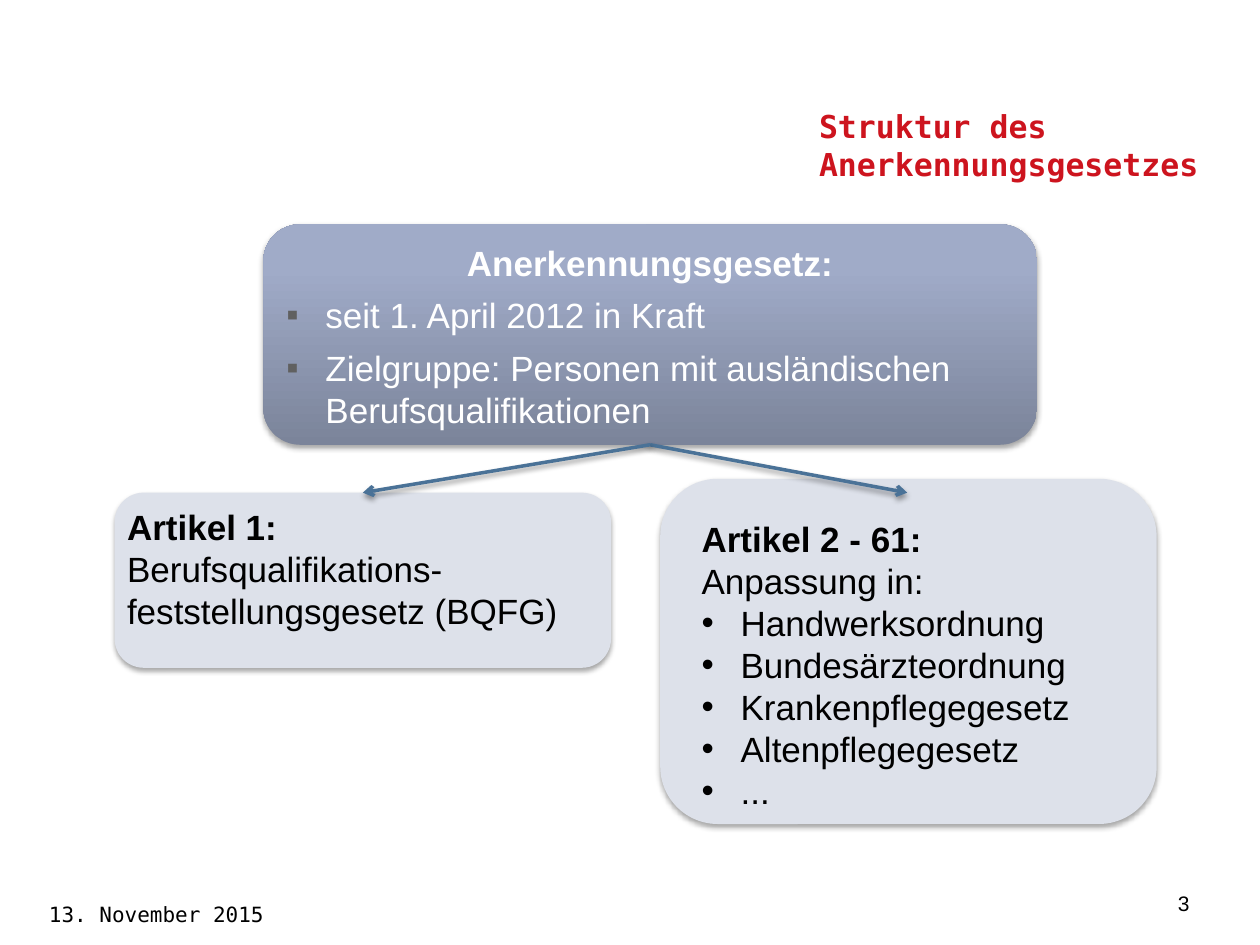
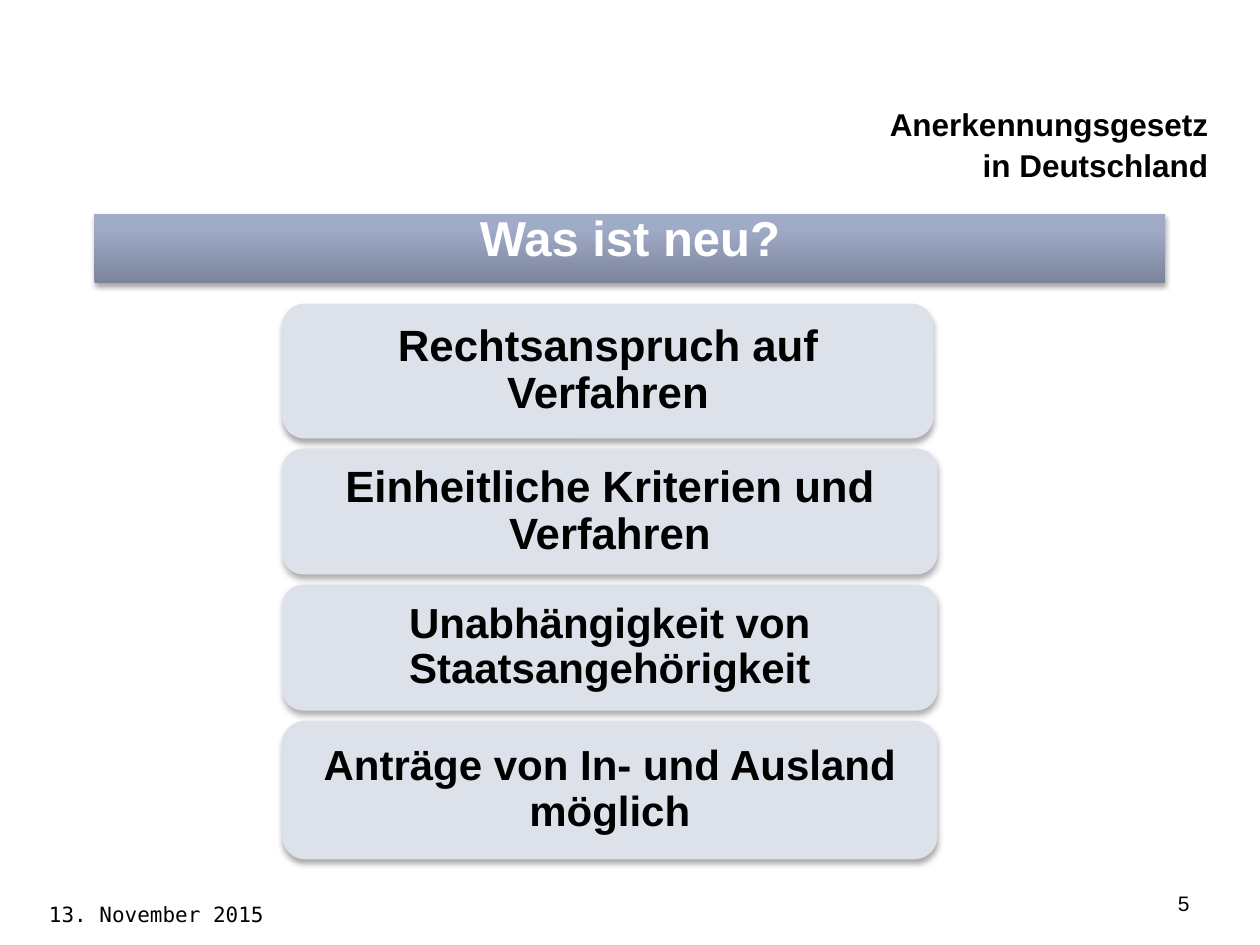
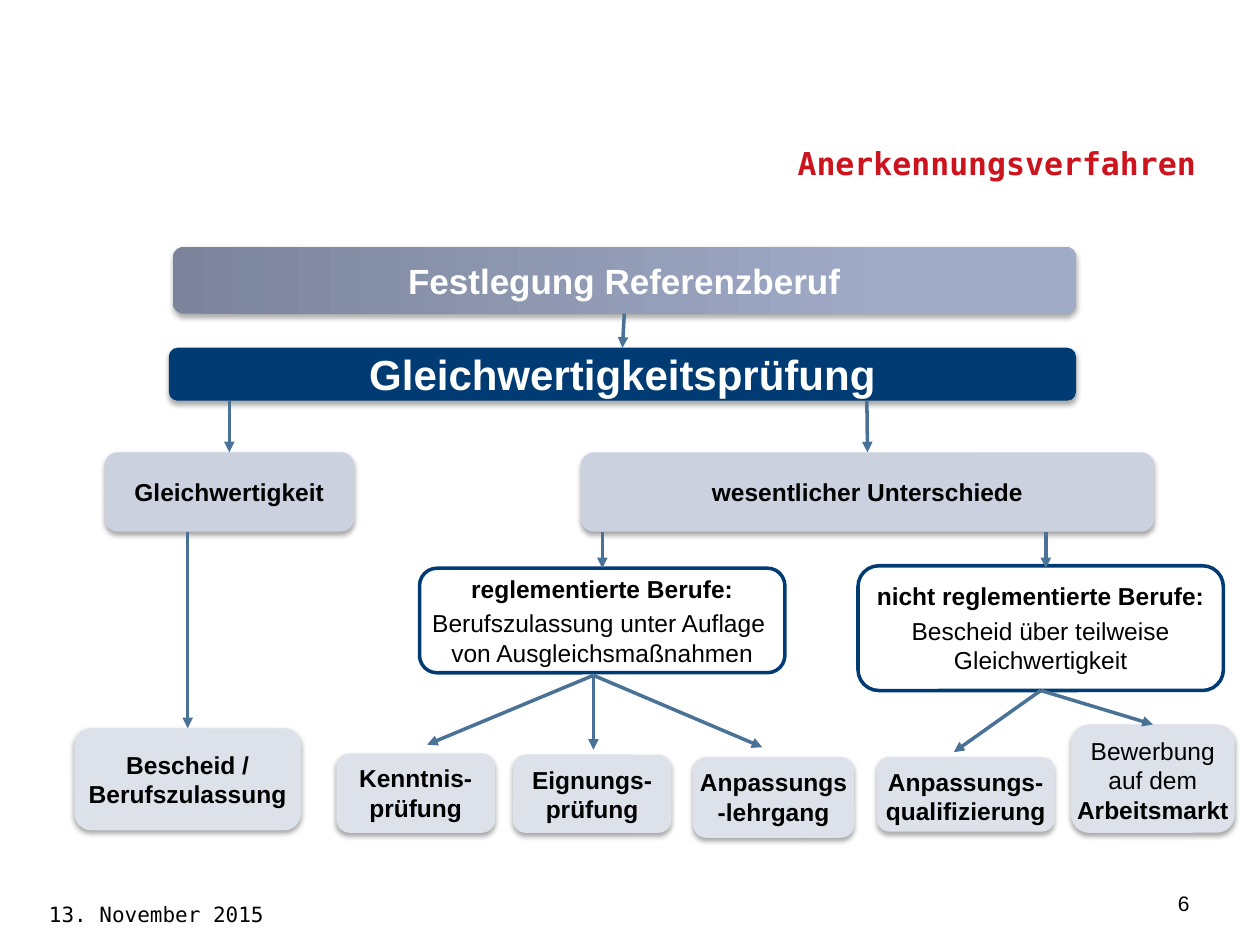
"""Builds three slides on the German recognition act for foreign qualifications."""
from copy import deepcopy

from lxml import etree
from pptx import Presentation
from pptx.dml.color import RGBColor
from pptx.enum import shapes, text
from pptx.oxml import ns
from pptx.util import Inches, Pt

BLACK = RGBColor(0x00, 0x00, 0x00)
WHITE = RGBColor(0xFF, 0xFF, 0xFF)
RED = RGBColor(0xCD, 0x14, 0x1E)
NAVY = RGBColor(0x00, 0x3C, 0x73)
STEEL = RGBColor(0x4A, 0x72, 0x97)
PALE = RGBColor(0xDD, 0xE1, 0xEA)
MIST = RGBColor(0xCC, 0xD1, 0xDF)
GRADIENT = (RGBColor(0x7B, 0x84, 0x9A), RGBColor(0xA0, 0xAB, 0xC8))
GREY = RGBColor(0x60, 0x60, 0x60)

SANS = "Arial"
MONO = "DejaVu Sans Mono"
SOFT_SHADOW = (35, 3.1, 1.8)
DEEP_SHADOW = (32, 3.5, 2.2)
TOP, MIDDLE = text.MSO_ANCHOR.TOP, text.MSO_ANCHOR.MIDDLE
LEFT, CENTER, RIGHT = text.PP_ALIGN.LEFT, text.PP_ALIGN.CENTER, text.PP_ALIGN.RIGHT
ROUNDED, RECTANGLE = shapes.MSO_SHAPE.ROUNDED_RECTANGLE, shapes.MSO_SHAPE.RECTANGLE


def sub(parent, tag, **attributes):
    """Append a DrawingML element to its parent."""
    return etree.SubElement(parent, ns.qn(tag), {k: str(v) for k, v in attributes.items()})


def inches(values):
    """Convert a sequence of numbers to lengths."""
    return [Inches(value) for value in values]


def cast_shadow(effects, opacity, blur, distance):
    """Add a black shadow that falls straight down."""
    outer = sub(effects, "a:outerShdw", blurRad=Pt(blur), dist=Pt(distance),
                dir=5400000, rotWithShape=0)
    color = sub(outer, "a:srgbClr", val=BLACK)
    sub(color, "a:alpha", val=opacity * 1000)


def add_text(frame, content, size=14, bold=False, color=BLACK, font=SANS, align=LEFT,
             after=0, line=None, indent=0, bullet=None, bullet_color=BLACK, bold_end=""):
    """Add one formatted paragraph to a text frame."""
    paragraph = frame.paragraphs[0]
    if paragraph.runs:
        paragraph = frame.add_paragraph()
    properties = paragraph._p.get_or_add_pPr()
    if indent:
        properties.set("marL", str(Inches(indent)))
    if bullet:
        properties.set("indent", str(-Inches(indent)))
        sub(sub(properties, "a:buClr"), "a:srgbClr", val=bullet_color)
        sub(properties, "a:buFont", typeface=SANS)
        sub(properties, "a:buChar", char=bullet)
    paragraph.alignment = align
    paragraph.space_before = Pt(0)
    paragraph.space_after = Pt(after)
    if line:
        paragraph.line_spacing = line
    for number, part in enumerate(content.split("\n")):
        if number:
            paragraph.add_line_break()
        paragraph.add_run().text = part
    if bold_end:
        paragraph.add_run().text = bold_end
    for run in paragraph.runs:
        run.font.name, run.font.size, run.font.bold = font, Pt(size), bold
        run.font.color.rgb = color
    if bold_end:
        paragraph.runs[-1].font.bold = True
    for line_break in paragraph._p.findall(ns.qn("a:br")):
        line_break.insert(0, deepcopy(paragraph.runs[0]._r.rPr))


def prepare(frame, anchor=TOP, side=0.1, edge=0.05):
    """Set wrapping, anchor and insets of a text frame."""
    frame.word_wrap = True
    frame.auto_size = text.MSO_AUTO_SIZE.NONE
    frame.vertical_anchor = anchor
    frame.margin_left = frame.margin_right = Inches(side)
    frame.margin_top = frame.margin_bottom = Inches(edge)
    return frame


def add_label(slide, place, **layout):
    """Add an empty text box and return its frame."""
    return prepare(slide.shapes.add_textbox(*inches(place)).text_frame, **layout)


def add_box(slide, place, fill=PALE, angle=None, outline=None, shadow=SOFT_SHADOW,
            outlined_by=ROUNDED, **layout):
    """Add a box with a solid fill, or with the gradient when an angle is given."""
    box = slide.shapes.add_shape(outlined_by, *inches(place))
    if angle is None:
        box.fill.solid()
        box.fill.fore_color.rgb = fill
    else:
        box.fill.gradient()
        box.fill.gradient_angle = angle
        for stop, color, position in zip(box.fill.gradient_stops, GRADIENT, (0, 0.8)):
            stop.color.rgb = color
            stop.position = position
    if outline:
        box.line.color.rgb = outline
        box.line.width = Pt(2)
    else:
        box.line.fill.background()
    box.shadow.inherit = False
    if shadow:
        cast_shadow(box._element.spPr.find(ns.qn("a:effectLst")), *shadow)
    prepare(box.text_frame, **layout)
    return box


def add_arrow(slide, start, end, head="triangle", shadow=None):
    """Draw an arrow; a box as start or end is joined at its bottom or top."""
    begin_point = (0, 0) if not isinstance(start, tuple) else start
    end_point = (0, 0) if not isinstance(end, tuple) else end
    arrow = slide.shapes.add_connector(shapes.MSO_CONNECTOR.STRAIGHT,
                                       *inches(begin_point + end_point))
    if not isinstance(start, tuple):
        arrow.begin_connect(start, 2)
    if not isinstance(end, tuple):
        arrow.end_connect(end, 0)
    arrow.line.color.rgb = STEEL
    arrow.line.width = Pt(2)
    sub(arrow.line._get_or_add_ln(), "a:tailEnd", type=head)
    effects = sub(arrow._element.spPr, "a:effectLst")
    if shadow:
        cast_shadow(effects, *shadow)


def add_slide(deck, number, title_place, title_lines, **title_format):
    """Add a title-only slide with its title, date and page number."""
    slide = deck.slides.add_slide(deck.slide_layouts[5])
    title = slide.shapes.title
    title.left, title.top, title.width, title.height = inches(title_place)
    frame = prepare(title.text_frame, anchor=MIDDLE)
    style = dict(size=18, bold=True, color=RED, font=MONO) | title_format
    for title_line in title_lines:
        add_text(frame, title_line, **style)
    add_text(add_label(slide, (0, 6.89, 10, 0.59)), "13. November 2015",
             size=12, font=MONO, indent=0.29, line=Pt(30))
    add_text(add_label(slide, (7.37, 7.02, 2.17, 0.28)), str(number), size=12, align=RIGHT)
    return slide


def build_structure(deck):
    """Slide on the structure of the act."""
    slide = add_slide(deck, 3, (6.4, 0.44, 3.34, 1.42),
                      ["Struktur des\nAnerkennungsgesetzes"])
    act = add_box(slide, (2.09, 1.78, 6.14, 1.75), angle=90)
    add_text(act.text_frame, "Anerkennungsgesetz:", size=20, bold=True, color=WHITE,
             align=CENTER, after=6)
    for fact in ("seit 1. April 2012 in Kraft",
                 "Zielgruppe: Personen mit ausländischen Berufsqualifikationen"):
        add_text(act.text_frame, fact, size=20, color=WHITE, after=6, indent=0.31,
                 bullet="▪", bullet_color=GREY)

    first_article = add_box(slide, (0.91, 3.91, 3.94, 1.39))
    add_box(slide, (5.24, 3.8, 3.94, 2.74))
    first = add_label(slide, (0.91, 3.96, 3.62, 1.11))
    add_text(first, "Artikel 1:", size=20, bold=True)
    add_text(first, "Berufsqualifikations-feststellungsgesetz (BQFG)", size=20)
    others = add_label(slide, (5.47, 4.06, 3.94, 2.46))
    add_text(others, "Artikel 2 - 61:", size=20, bold=True)
    add_text(others, "Anpassung in:", size=20)
    for law in ("Handwerksordnung", "Bundesärzteordnung", "Krankenpflegegesetz",
                "Altenpflegegesetz", "..."):
        add_text(others, law, size=20, indent=0.31, bullet="•")
    for target in ((7.2, 3.91), first_article):
        add_arrow(slide, act, target, head="arrow", shadow=(38, 3.1, 1.6))


def build_news(deck):
    """Slide on what the act changes."""
    slide = add_slide(deck, 5, (6.65, 0.76, 3.04, 0.77),
                      ["Anerkennungsgesetz", "in Deutschland"],
                      font=SANS, color=BLACK, align=RIGHT, after=2)
    question = add_box(slide, (0.75, 1.7, 8.5, 0.55), angle=90, outlined_by=RECTANGLE,
                       side=0, edge=0)
    add_text(question.text_frame, "Was ist neu?", size=28, bold=True, color=WHITE,
             align=CENTER, line=Pt(30))
    top = 2.41
    for change, width, height, size in (
            ("Rechtsanspruch auf Verfahren", 5.17, 1.07, 25),
            ("Einheitliche Kriterien und Verfahren", 5.2, 1, 25),
            ("Unabhängigkeit von Staatsangehörigkeit", 5.2, 1, 24),
            ("Anträge von In- und Ausland möglich", 5.2, 1.1, 24)):
        card = add_box(slide, (2.24, top, width, height), shadow=DEEP_SHADOW, anchor=MIDDLE)
        add_text(card.text_frame, change, size=size, bold=True, align=CENTER, line=0.9)
        top += height + 0.08


def add_step(slide, place, content, size=14, color=BLACK, **look):
    """Add a box with a bold centred caption in its middle."""
    step = add_box(slide, place, anchor=MIDDLE, side=0.04, **look)
    add_text(step.text_frame, content, size=size, bold=True, color=color, align=CENTER)
    return step


def add_case(slide, place, heading, outcome):
    """Add an outlined box with a heading and its outcome."""
    case = add_box(slide, place, fill=WHITE, outline=NAVY, shadow=None,
                   anchor=MIDDLE, side=0)
    add_text(case.text_frame, heading, bold=True, align=CENTER, after=3)
    add_text(case.text_frame, outcome, align=CENTER)
    return case


def add_measure(slide, place, content, bold=True, bold_end=""):
    """Add a box for a measure at the foot of the chart."""
    measure = add_box(slide, place, side=0)
    add_text(measure.text_frame, content, bold=bold, bold_end=bold_end, align=CENTER)
    return measure


def build_procedure(deck):
    """Slide with the flow of the recognition procedure."""
    slide = add_slide(deck, 6, (6.23, 1.07, 3.45, 0.44), ["Anerkennungsverfahren"])
    notice = add_step(slide, (0.59, 5.78, 1.8, 0.81), "Bescheid / Berufszulassung")
    for place, measure in (((5.5, 6.01, 1.28, 0.64), "Anpassungs-lehrgang"),
                           ((4.07, 5.99, 1.26, 0.62), "Eignungs-\nprüfung"),
                           ((2.67, 5.98, 1.26, 0.63), "Kenntnis-\nprüfung"),
                           ((6.96, 6.01, 1.41, 0.59), "Anpassungs-qualifizierung")):
        add_measure(slide, place, measure)
    application = add_measure(slide, (8.5, 5.75, 1.3, 0.86), "Bewerbung auf dem ",
                              bold=False, bold_end="Arbeitsmarkt")
    regulated = add_case(slide, (3.33, 4.51, 2.9, 0.83), "reglementierte Berufe:",
                         "Berufszulassung unter Auflage \nvon Ausgleichsmaßnahmen")
    unregulated = add_case(slide, (6.81, 4.49, 2.9, 0.99), "nicht reglementierte Berufe:",
                           "Bescheid über teilweise Gleichwertigkeit")
    check = add_step(slide, (1.34, 2.76, 7.2, 0.42), "Gleichwertigkeitsprüfung",
                     size=24, color=WHITE, fill=NAVY)
    reference = add_step(slide, (1.37, 1.96, 7.17, 0.53), "Festlegung Referenzberuf",
                         size=20, color=WHITE, angle=0)
    differences = add_step(slide, (4.61, 3.59, 4.55, 0.63), "wesentlicher Unterschiede",
                           fill=MIST)
    equivalence = add_step(slide, (0.83, 3.59, 1.98, 0.63), "Gleichwertigkeit", fill=MIST)

    for start, end in ((reference, check),
                       ((1.82, 3.18), equivalence),
                       ((6.88, 3.18), differences),
                       ((1.49, 4.22), notice),
                       ((4.78, 4.22), regulated),
                       ((8.3, 4.22), (8.3, 4.51)),
                       ((4.71, 5.36), (3.39, 5.91)),
                       ((4.71, 5.36), (4.71, 5.95)),
                       ((4.71, 5.36), (6.05, 5.93)),
                       (unregulated, (7.57, 5.97)),
                       (unregulated, application)):
        add_arrow(slide, start, end)


def main():
    """Build the deck and save it."""
    deck = Presentation()
    deck.slide_width, deck.slide_height = Inches(10), Inches(7.5)
    build_structure(deck)
    build_news(deck)
    build_procedure(deck)
    deck.save("out.pptx")


if __name__ == "__main__":
    main()
